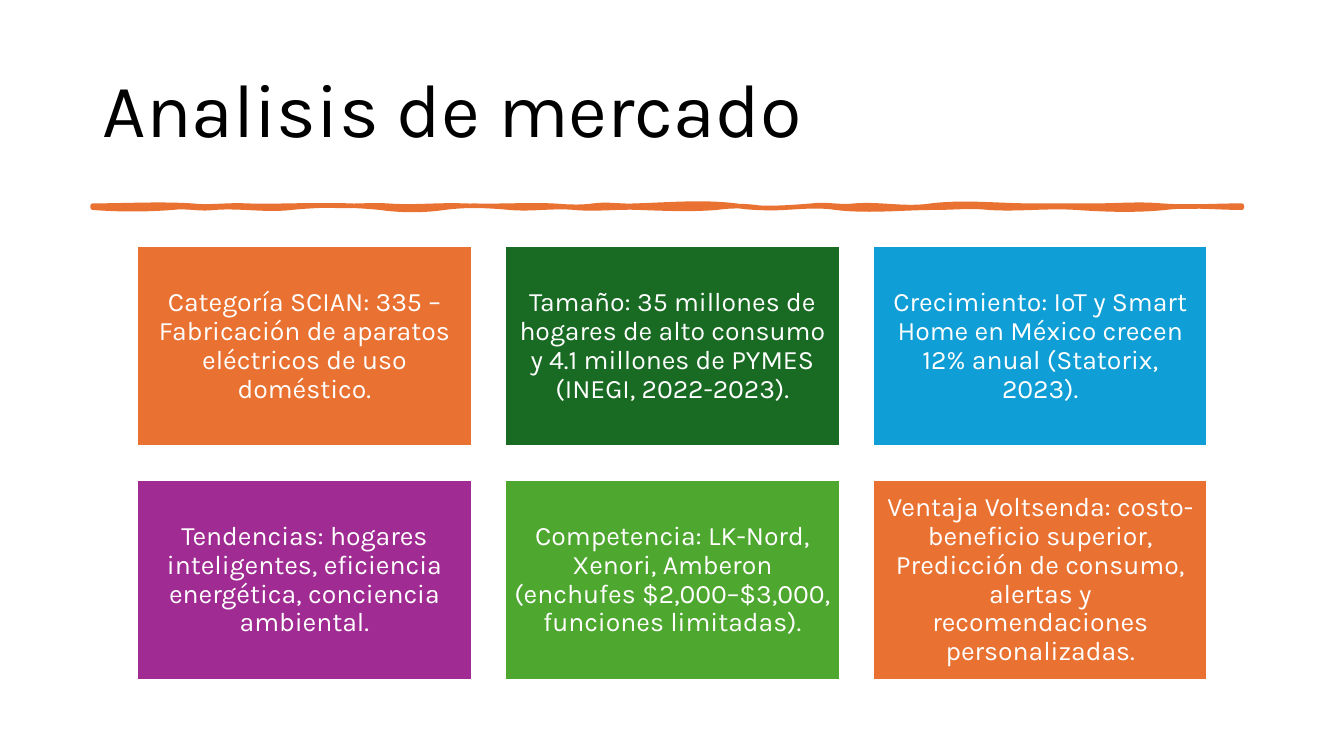
from dataclasses import dataclass
from typing import NamedTuple

from lxml import etree
from pptx import Presentation
from pptx import util as u
from pptx.dml.color import RGBColor
from pptx.enum import shapes, text
from pptx.oxml import ns


@dataclass(frozen=True)
class Theme:
    font: str = "Karla"
    title_size: int = 54
    card_size: int = 19
    black: str = "000000"
    white: str = "FFFFFF"
    orange: str = "E97132"
    dark_green: str = "196B24"
    blue: str = "0F9ED5"
    purple: str = "A02B93"
    green: str = "4EA72E"


class Card(NamedTuple):
    fill: str
    body: str


class Ripple(NamedTuple):
    """Stretch of a wavy edge: its end and the bends, in 1/100 inch, on the way."""
    end: float
    bend_in: int
    bend_out: int


T = Theme()

CARDS = [
    Card(T.orange, "Categoría SCIAN: 335 – Fabricación de aparatos eléctricos de uso doméstico."),
    Card(T.dark_green, "Tamaño: 35 millones de hogares de alto consumo y 4.1 millones de PYMES "
                       "(INEGI, 2022-2023)."),
    Card(T.blue, "Crecimiento: IoT y Smart Home en México crecen 12% anual (Statorix, 2023)."),
    Card(T.purple, "Tendencias: hogares inteligentes, eficiencia energética, conciencia ambiental."),
    Card(T.green, "Competencia: LK-Nord, Xenori, Amberon (enchufes $2,000–$3,000, "
                  "funciones limitadas)."),
    Card(T.orange, "Ventaja Voltsenda: costo-beneficio superior, Predicción de consumo, "
                   "alertas y recomendaciones personalizadas."),
]
COLUMNS = 3
CARD_LEFT, CARD_TOP = 1.36, 2.44
CARD_WIDTH, CARD_HEIGHT = 3.32, 1.99
STEP_X, STEP_Y = 3.65, 2.32

RULE_LEFT, RULE_RIGHT = 0.92, 12.32
RULE_TOP, RULE_BOTTOM = 2.04, 2.06
TOP_EDGE = [Ripple(*v) for v in (
    (1.9, 0, -2), (2.44, 2, -1), (3.31, 1, -1), (3.84, 1, -1), (4.6, 2, -1), (5.48, 1, -1),
    (5.89, 1, 2), (6.31, -2, 1), (7.3, -1, -4), (8.06, 4, 2), (8.48, -2, 2), (9.24, -2, 4),
    (10.23, -4, 0), (10.87, 0, 0), (11.52, 0, -2), (RULE_RIGHT, 2, 0))]
BOTTOM_EDGE = [Ripple(*v) for v in (
    (11.56, 0, -3), (10.68, 3, 2), (9.81, -2, 2), (9.28, -2, 0), (8.29, 0, 4), (7.53, -4, 2),
    (7.11, -2, -2), (6.35, 2, 1), (5.7, -1, 2), (5.06, -2, 2), (4.41, -2, -3), (3.77, 3, 3),
    (2.89, -3, -3), (2.13, 3, -2), (1.71, 2, -2), (RULE_LEFT, 2, 2))]


def rgb(value: str) -> RGBColor:
    return RGBColor.from_string(value)


def write(sp, body: str, size: int, color: str, align) -> None:
    tf = sp.text_frame
    tf.word_wrap = True
    tf.vertical_anchor = text.MSO_ANCHOR.MIDDLE
    p = tf.paragraphs[0]
    p.text = body
    p.alignment = align
    p.line_spacing = 0.9
    p.font.name = T.font
    p.font.size = u.Pt(size)
    p.font.color.rgb = rgb(color)


def paint(sp, fill: str, line: str, width: float) -> None:
    sp.shadow.inherit = False
    sp.fill.solid()
    sp.fill.fore_color.rgb = rgb(fill)
    sp.line.color.rgb = rgb(line)
    sp.line.width = u.Pt(width)


def bend_line(line, start: float, y: float, ripple: Ripple) -> None:
    """Turn a straight segment of the rule into a cubic curve."""
    line.tag = ns.qn("a:cubicBezTo")
    third = (ripple.end - start) / 3
    controls = ((start + third, ripple.bend_in), (ripple.end - third, ripple.bend_out))
    for i, (x, bend) in enumerate(controls):
        pt = etree.Element(ns.qn("a:pt"), x=str(u.Inches(x - RULE_LEFT)),
                           y=str(u.Inches(y + bend / 100 - RULE_TOP)))
        line.insert(i, pt)


def add_title(s, body: str) -> None:
    sp = s.shapes.add_textbox(u.Inches(0.92), u.Inches(0.4), u.Inches(11.5), u.Inches(1.45))
    write(sp, body, T.title_size, T.black, text.PP_ALIGN.LEFT)


def add_wavy_rule(s) -> None:
    edges = ((RULE_LEFT, RULE_TOP, TOP_EDGE), (RULE_RIGHT, RULE_BOTTOM, BOTTOM_EDGE))
    builder = s.shapes.build_freeform(u.Inches(RULE_LEFT), u.Inches(RULE_TOP))
    builder.add_line_segments([(u.Inches(r.end), u.Inches(RULE_TOP)) for r in TOP_EDGE], close=False)
    builder.add_line_segments(
        [(u.Inches(x), u.Inches(RULE_BOTTOM)) for x in (RULE_RIGHT, *(r.end for r in BOTTOM_EDGE))])
    sp = builder.convert_to_shape()
    lines = list(sp.element.iter(ns.qn("a:lnTo")))
    del lines[len(TOP_EDGE)]  # the right end stays straight
    remaining = iter(lines)
    for start, y, edge in edges:
        for ripple in edge:
            bend_line(next(remaining), start, y, ripple)
            start = ripple.end
    paint(sp, T.orange, T.orange, 3.25)


def add_card(s, index: int, card: Card) -> None:
    row, column = divmod(index, COLUMNS)
    sp = s.shapes.add_shape(
        shapes.MSO_SHAPE.RECTANGLE,
        u.Inches(CARD_LEFT + column * STEP_X), u.Inches(CARD_TOP + row * STEP_Y),
        u.Inches(CARD_WIDTH), u.Inches(CARD_HEIGHT))
    paint(sp, card.fill, T.white, 1.5)
    tf = sp.text_frame
    tf.margin_left = tf.margin_right = tf.margin_top = tf.margin_bottom = u.Inches(0.08)
    write(sp, card.body, T.card_size, T.white, text.PP_ALIGN.CENTER)


def main() -> None:
    prs = Presentation()
    prs.slide_width, prs.slide_height = u.Inches(40 / 3), u.Inches(7.5)
    s = prs.slides.add_slide(prs.slide_layouts[6])

    # Heading and hand-drawn rule
    add_title(s, "Analisis de mercado")
    add_wavy_rule(s)

    # Grid of market facts
    for index, card in enumerate(CARDS):
        add_card(s, index, card)

    prs.save("out.pptx")


if __name__ == "__main__":
    main()
